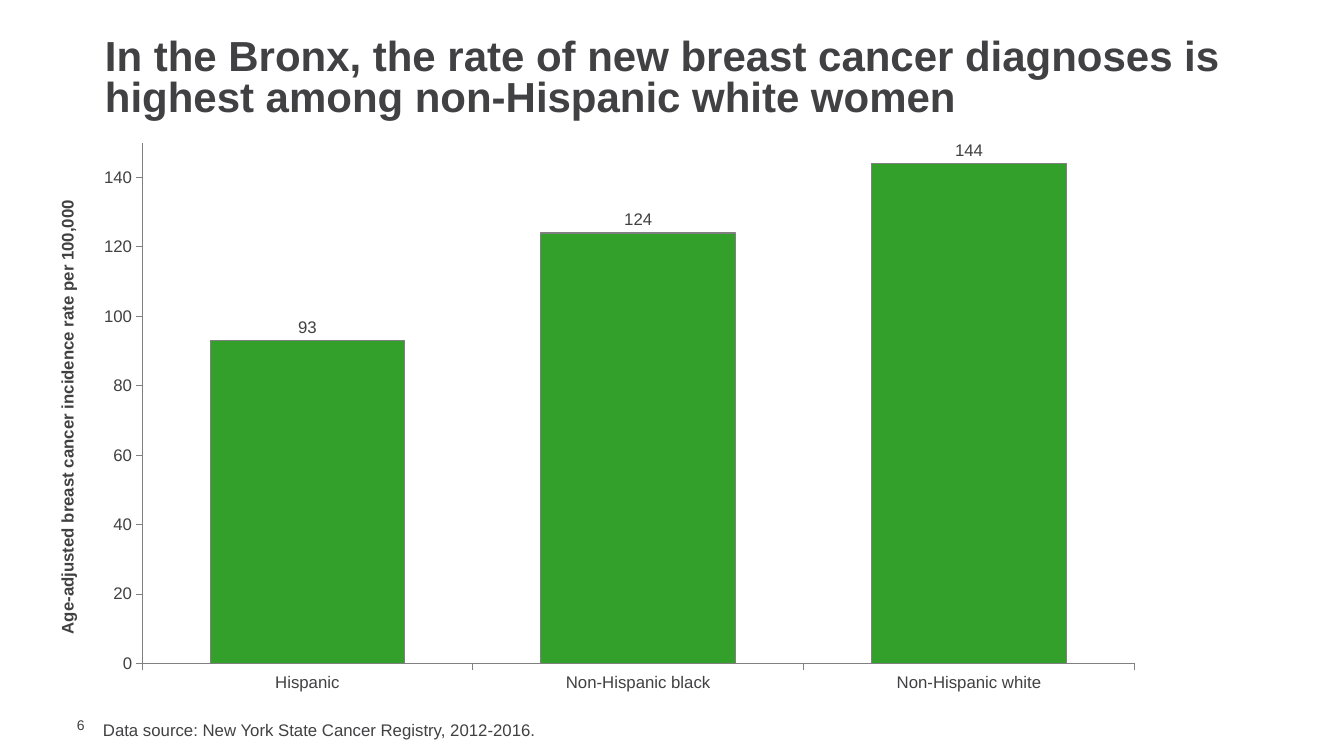
from lxml import etree
from pptx import Presentation
from pptx.chart.data import CategoryChartData
from pptx.dml.color import RGBColor
from pptx.enum.chart import XL_CHART_TYPE, XL_LABEL_POSITION, XL_TICK_MARK
from pptx.enum.text import MSO_ANCHOR
from pptx.oxml import parse_xml
from pptx.util import Pt

PX = 914400 / 100.8
FONT = "Arial"
INK = RGBColor(0x41, 0x40, 0x42)
GREEN = RGBColor(0x33, 0xA0, 0x2C)
GRAY = RGBColor(0x80, 0x80, 0x80)
COLUMN = XL_CHART_TYPE.COLUMN_CLUSTERED
OUTSIDE_END = XL_LABEL_POSITION.OUTSIDE_END
TICK_OUT, TICK_NONE = XL_TICK_MARK.OUTSIDE, XL_TICK_MARK.NONE
TOP, MIDDLE = MSO_ANCHOR.TOP, MSO_ANCHOR.MIDDLE
CHART_NS = "http://schemas.openxmlformats.org/drawingml/2006/chart"


def px(*lengths):
    return [round(n * PX) for n in lengths]


def style(font, size, bold=False):
    font.name, font.size, font.bold = FONT, Pt(size), bold
    font.color.rgb = INK


prs = Presentation()
prs.slide_width, prs.slide_height = px(1344, 756)
s = prs.slides.add_slide(prs.slide_layouts[6])

texts = [
    ("In the Bronx, the rate of new breast cancer diagnoses is "
     "highest among non-Hispanic white women",
     (95, 34, 1155, 92), 30, True, MIDDLE, (10, 5, 10, 5), 0.8),
    ("6", (67, 716, 43, 17), 10, False, MIDDLE, (10, 0, 0, 0), 1.0),
    ("Data source: New York State Cancer Registry, 2012-2016.",
     (93, 715, 1000, 30), 12, False, TOP, (10, 5, 10, 5), 1.0),
]
for text, box, size, bold, anchor, insets, spacing in texts:
    tf = s.shapes.add_textbox(*px(*box)).text_frame
    tf.word_wrap = True
    tf.vertical_anchor = anchor
    tf.margin_left, tf.margin_top, tf.margin_right, tf.margin_bottom = px(*insets)
    p = tf.paragraphs[0]
    p.line_spacing = spacing
    r = p.add_run()
    r.text = text
    style(r.font, size, bold)

data = CategoryChartData(number_format="0")
data.categories = ["Hispanic", "Non-Hispanic black", "Non-Hispanic white"]
data.add_series("Series 1", [93, 124, 144])
chart = s.shapes.add_chart(COLUMN, *px(50, 126, 1109, 577), data).chart
chart.has_legend = False
chart.has_title = False
style(chart.font, 10)

for axis in (chart.category_axis, chart.value_axis):
    axis.has_major_gridlines = False
    axis.major_tick_mark = TICK_OUT
    axis.minor_tick_mark = TICK_NONE
    axis.format.line.color.rgb = GRAY
    axis.format.line.width = Pt(0.75)
    style(axis.tick_labels.font, 12)

rates = chart.value_axis
rates.minimum_scale, rates.maximum_scale, rates.major_unit = 0, 150, 20
rates.tick_labels.number_format = "0"
rates.tick_labels.number_format_is_linked = False
r = rates.axis_title.text_frame.paragraphs[0].add_run()
r.text = "Age-adjusted breast cancer incidence rate per 100,000"
style(r.font, 12, True)

plot = chart.plots[0]
plot.gap_width = 70
plot.vary_by_categories = False
bars = plot.series[0]
bars.format.fill.solid()
bars.format.fill.fore_color.rgb = GREEN
bars.format.line.color.rgb = GRAY
bars.format.line.width = Pt(0.75)
labels = bars.data_labels
labels.show_value = True
labels.number_format = "0"
labels.number_format_is_linked = False
labels.position = OUTSIDE_END
style(labels.font, 12)

layout = parse_xml(f'<c:layout xmlns:c="{CHART_NS}"><c:manualLayout/></c:layout>')
for tag, val in [("layoutTarget", "inner"), ("xMode", "edge"), ("yMode", "edge"),
                 ("x", "0.083"), ("y", "0.029"), ("w", "0.895"), ("h", "0.903")]:
    etree.SubElement(layout[0], f"{{{CHART_NS}}}{tag}").set("val", val)
plot_area = chart.element.chart.plotArea
for old in plot_area.findall(f"{{{CHART_NS}}}layout"):
    plot_area.remove(old)
plot_area.insert(0, layout)

prs.save("out.pptx")
